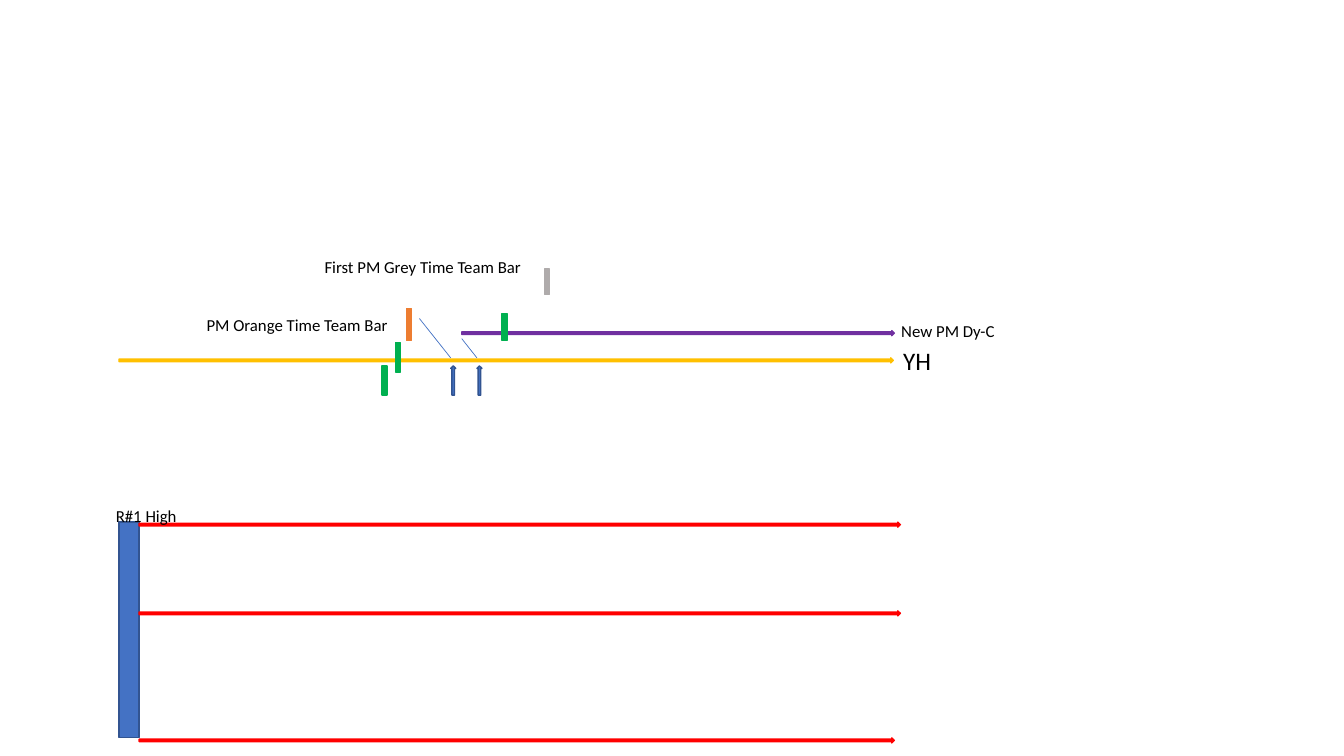
from pptx import Presentation
from pptx.dml.color import RGBColor
from pptx.enum.shapes import MSO_CONNECTOR, MSO_SHAPE
from pptx.enum.text import MSO_ANCHOR
from pptx.oxml.ns import qn
from pptx.util import Inches, Pt
from lxml.etree import SubElement

BLACK = RGBColor(0x00, 0x00, 0x00)
BLUE = RGBColor(0x44, 0x72, 0xC4)
DARK_BLUE = RGBColor(0x32, 0x54, 0x91)
GOLD = RGBColor(0xFF, 0xC0, 0x00)
GREEN = RGBColor(0x00, 0xB0, 0x50)
GREY = RGBColor(0xAF, 0xAB, 0xAB)
ORANGE = RGBColor(0xED, 0x7D, 0x31)
PURPLE = RGBColor(0x70, 0x30, 0xA0)
RED = RGBColor(0xFF, 0x00, 0x00)
THIN = 0.05  # width of every bar and arrow, in inches


def add_filled(slide, kind, left, top, width, height, fill, line=None):
    shape = slide.shapes.add_shape(
        kind, Inches(left), Inches(top), Inches(width), Inches(height))
    shape.shadow.inherit = False
    shape.fill.solid()
    shape.fill.fore_color.rgb = fill
    shape.line.color.rgb = line or fill
    shape.line.width = Pt(1)
    return shape


def add_level(slide, left, top, width, color):
    """Horizontal price level, drawn as a thin arrow to the right."""
    return add_filled(slide, MSO_SHAPE.RIGHT_ARROW, left, top, width, THIN, color)


def add_text(slide, text, left, top, width, height, size=12, color=BLACK,
             font="Calibri", anchor=MSO_ANCHOR.BOTTOM):
    box = slide.shapes.add_textbox(
        Inches(left), Inches(top), Inches(width), Inches(height))
    frame = box.text_frame
    frame.word_wrap = True
    frame.vertical_anchor = anchor
    run = frame.paragraphs[0].add_run()
    run.text = text
    run.font.name = font
    run.font.size = Pt(size)
    run.font.color.rgb = color
    return box


def add_pointer(slide, x1, y1, x2, y2):
    connector = slide.shapes.add_connector(
        MSO_CONNECTOR.STRAIGHT, Inches(x1), Inches(y1), Inches(x2), Inches(y2))
    connector.line.color.rgb = BLUE
    connector.line.width = Pt(0.5)
    SubElement(connector._element.spPr, qn("a:effectLst"))


def add_opening_range(slide, left, top, height):
    # Range bar with its high, middle and low levels
    bar_width = 0.2
    add_filled(slide, MSO_SHAPE.RECTANGLE, left, top, bar_width, height,
               BLUE, DARK_BLUE)
    for offset, width in ((0, 7.55), (0.88, 7.55), (height, 7.49)):
        add_level(slide, left + bar_width, top + offset, width, RED)
    add_text(slide, "R#1 High", left - 0.13, top - 0.82, 1.79, 0.91)


def add_timeline(slide, left, top):
    # Yesterday's high and the new afternoon level
    add_level(slide, left, top + 1.25, 7.68, GOLD)
    add_level(slide, left + 3.4, top + 0.98, 4.29, PURPLE)

    # Time bars: offset from the left, offset from the top, height, colour
    for x, y, height, color in (
            (2.85, 0.76, 0.32, ORANGE),
            (4.22, 0.37, 0.25, GREY),
            (2.61, 1.33, 0.29, GREEN),
            (2.74, 1.10, 0.29, GREEN),
            (3.80, 0.81, 0.27, GREEN)):
        add_filled(slide, MSO_SHAPE.RECTANGLE, left + x, top + y, THIN, height, color)

    # Up arrows, each with a pointer line coming down to it
    for x, line_x, line_y in ((3.29, 2.98, 0.86), (3.55, 3.4, 1.06)):
        add_filled(slide, MSO_SHAPE.UP_ARROW, left + x, top + 1.33, THIN, 0.29,
                   BLUE, DARK_BLUE)
        add_pointer(slide, left + line_x, top + line_y, left + x, top + 1.25)

    # Labels
    add_text(slide, "YH", left + 7.68, top + 1.08, 1.02, 0.4, size=18)
    add_text(slide, "PM Orange Time Team Bar", left + 0.77, top - 0.65, 3.95, 1.72)
    add_text(slide, "First PM Grey Time Team Bar", left + 1.94, top, 6.01, 0.5)
    add_text(slide, "New PM Dy-C", left + 7.66, top + 0.63, 3.32, 0.5)


def main():
    presentation = Presentation()
    presentation.slide_width = Inches(13.33)
    presentation.slide_height = Inches(7.5)
    slide = presentation.slides.add_slide(presentation.slide_layouts[6])
    add_opening_range(slide, left=1.18, top=5.18, height=2.14)
    add_timeline(slide, left=1.18, top=2.3)
    presentation.save("out.pptx")


if __name__ == "__main__":
    main()
